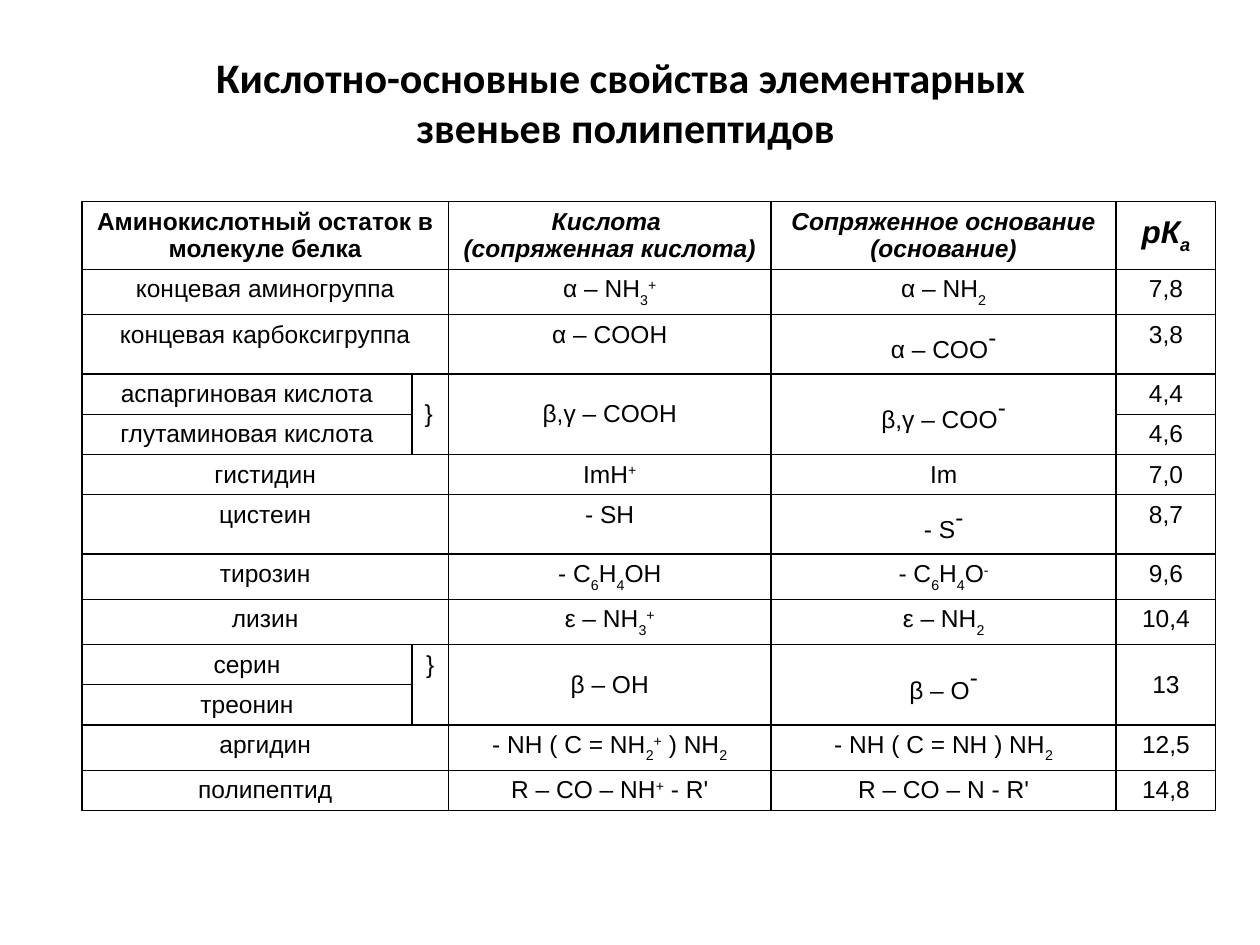
from dataclasses import dataclass

from lxml import etree
from pptx import Presentation
from pptx.dml.color import RGBColor
from pptx.enum.text import MSO_ANCHOR, MSO_AUTO_SIZE, PP_ALIGN
from pptx.oxml.ns import qn
from pptx.util import Inches, Pt

TOP, MID = MSO_ANCHOR.TOP, MSO_ANCHOR.MIDDLE
CENTER, JUST = PP_ALIGN.CENTER, PP_ALIGN.JUSTIFY
GROW = MSO_AUTO_SIZE.SHAPE_TO_FIT_TEXT


@dataclass(frozen=True)
class Theme:
    ink: str = "000000"
    head: str = "Calibri"
    body: str = "Arial"
    title: int = 24
    cell: int = 14
    pka: int = 18
    minus: int = 24
    line: float = 1
    thin: float = 0.75


THEME = Theme()
COLS = (2.62, 0.29, 2.56, 2.74, 0.79)
HEIGHTS = (0.41, 0.24, 0.36) + (0.24,) * 3 + (0.27,) + (0.24,) * 6
ROWS = (
    ("Аминокислотный остаток в молекуле белка", None,
     "Кислота \n(сопряженная кислота)", "Сопряженное основание (основание)", "рК_а"),
    ("концевая аминогруппа", None, "α – NH_3^+", "α – NH_2", "7,8"),
    ("концевая карбоксигруппа", None, "α – COOH", "α – COO~‑", "3,8"),
    ("аспаргиновая кислота", "}", "β,γ – COOH", "β,γ – COO~‑", "4,4"),
    ("глутаминовая кислота", None, None, None, "4,6"),
    ("гистидин", None, "ImH^+", "Im", "7,0"),
    ("цистеин", None, "‑ SH", "‑ S~‑", "8,7"),
    ("тирозин", None, "‑ C_6H_4OH", "‑ C_6H_4O^‑", "9,6"),
    ("лизин", None, "ε – NH_3^+", "ε – NH_2", "10,4"),
    ("серин", "}", "β – OH", "β – O~‑", "13"),
    ("треонин", None, None, None, None),
    ("аргидин", None, "‑ NH ( C = NH_2^+ ) NH_2", "‑ NH ( C = NH ) NH_2", "12,5"),
    ("полипептид", None, "R – CO – NH^+ ‑ R'", "R – CO – N ‑ R'", "14,8"),
)


def split(text):
    runs, mark = [], ""
    for sign in text:
        if sign in "_^~":
            mark = sign
        elif mark or not runs or runs[-1][0]:
            runs.append([mark, sign])
            mark = ""
        else:
            runs[-1][1] += sign
    return runs


def write(frame, text, font=THEME.body, size=THEME.cell, bold=False,
          slant=False, align=CENTER, sub=-30):
    shifts = {"_": sub, "^": 30, "~": 30}
    for num, line in enumerate(text.split("\n")):
        para = frame.add_paragraph() if num else frame.paragraphs[0]
        para.alignment = align
        for mark, part in split(line):
            run = para.add_run()
            run.text = part
            face = run.font
            face.name, face.bold, face.italic = font, bold, slant
            face.size = Pt(THEME.minus if mark == "~" else size)
            face.color.rgb = RGBColor.from_string(THEME.ink)
            if mark:
                run._r.get_or_add_rPr().set("baseline", str(shifts[mark] * 1000))


def edge(cell, thin):
    cell.fill.background()
    props = cell._tc.get_or_add_tcPr()
    for num, side in enumerate("LRTB"):
        line = etree.Element(qn("a:ln" + side))
        line.set("w", str(Pt(THEME.thin if side in thin else THEME.line)))
        fill = etree.SubElement(line, qn("a:solidFill"))
        etree.SubElement(fill, qn("a:srgbClr")).set("val", THEME.ink)
        props.insert(num, line)


def sides(row, col):
    paired = ROWS[row][1]
    lower = ROWS[row][2] is None
    if col == 0 and (paired or lower):
        return "RT" if lower else "RB"
    return "L" if col == 1 and (paired or lower) else ""


def add_title(slide, left, top, width, height):
    box = slide.shapes.add_textbox(left, top, width, height)
    frame = box.text_frame
    frame.word_wrap = False
    frame.auto_size = GROW
    write(frame, "Кислотно-основные свойства элементарных \nзвеньев полипептидов",
          font=THEME.head, size=THEME.title, bold=True)


def add_grid(slide, left, top, width, height):
    frame = slide.shapes.add_table(len(ROWS), len(COLS), left, top, width, height)
    grid = frame.table
    grid.first_row = grid.horz_banding = False
    for col, size in zip(grid.columns, COLS):
        col.width = Inches(size)
    for row, size in zip(grid.rows, HEIGHTS):
        row.height = Inches(size)
    frame.height = height

    for row, texts in enumerate(ROWS):
        for col, text in enumerate(texts):
            cell = grid.cell(row, col)
            edge(cell, sides(row, col))
            if text is None:
                continue
            tall = bool(texts[1]) and ROWS[row + 1][col] is None
            if tall:
                cell.merge(grid.cell(row + 1, col))
            elif col == 0 and texts[1] is None and texts[2]:
                cell.merge(grid.cell(row, 1))
            brace = col == 1
            last = brace and ROWS[row + 1][4] is None
            head = row == 0
            cell.vertical_anchor = MID if head or tall and not last else TOP
            write(cell.text_frame, text, bold=head, slant=head and col > 0,
                  size=THEME.pka if head and col == 4 else THEME.cell,
                  align=JUST if brace and not last else CENTER,
                  sub=-25 if head else -30)


def main():
    deck = Presentation()
    deck.slide_width, deck.slide_height = Inches(10), Inches(7.5)
    slide = deck.slides.add_slide(deck.slide_layouts[6])
    add_grid(slide, Inches(0.65), Inches(1.6), Inches(9), Inches(4.77))
    add_title(slide, Inches(1.06), Inches(0.36), Inches(7.81), Inches(0.9))
    deck.save("out.pptx")


if __name__ == "__main__":
    main()
